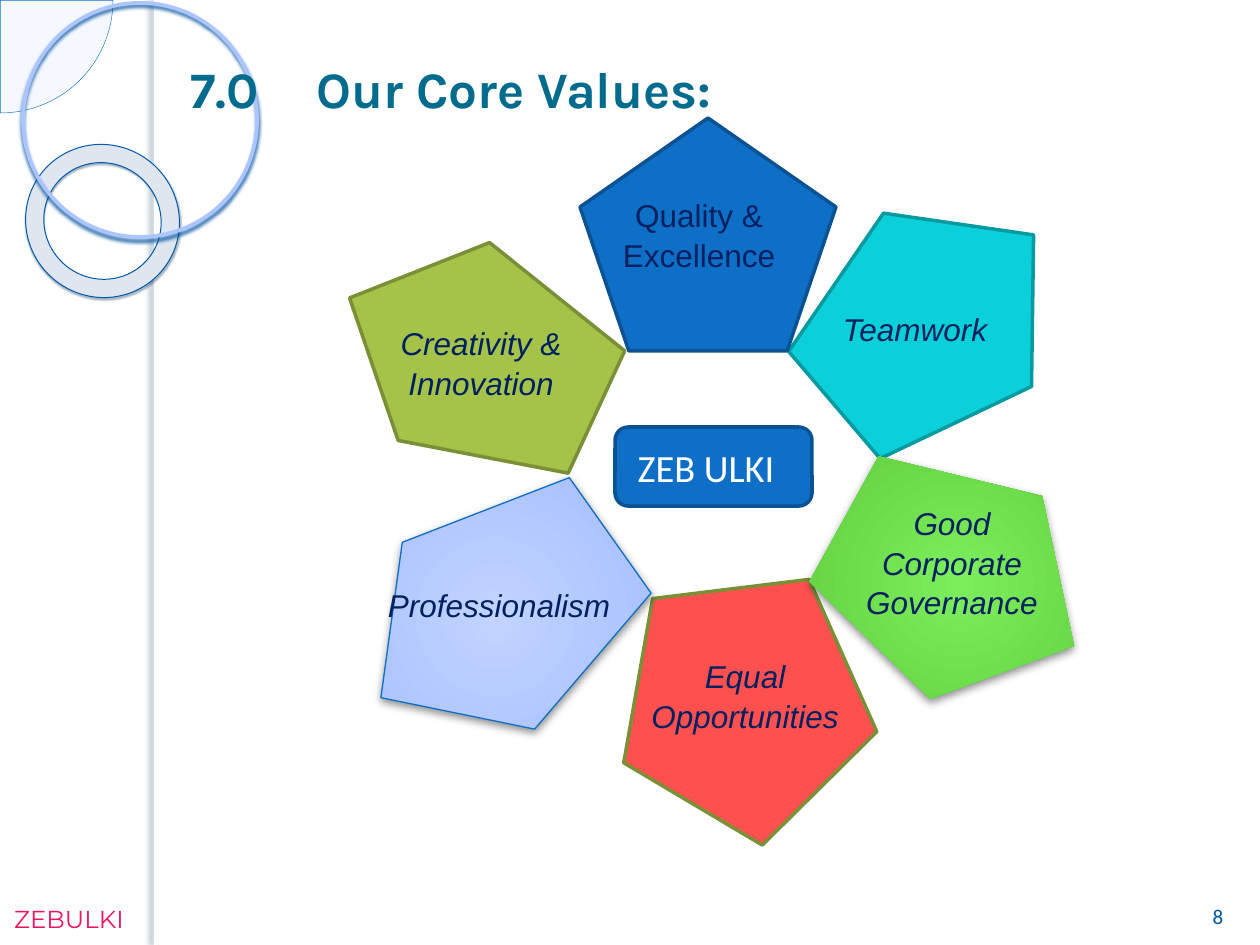
"""Build the core values slide: six pentagons around a centre label."""
from lxml import etree
from pptx import Presentation
from pptx.dml.color import RGBColor
from pptx.enum.shapes import MSO_SHAPE
from pptx.enum.text import MSO_ANCHOR, PP_ALIGN
from pptx.oxml.ns import qn
from pptx.util import Pt

PX = 914400 / 126
PENTAGON = MSO_SHAPE.REGULAR_PENTAGON
OVAL = MSO_SHAPE.OVAL
DONUT = MSO_SHAPE.DONUT
PIE = MSO_SHAPE.CHORD if not hasattr(MSO_SHAPE, "PIE") else MSO_SHAPE.PIE
RECT = MSO_SHAPE.RECTANGLE
LABEL = MSO_SHAPE.FLOWCHART_ALTERNATE_PROCESS
CENTER, LEFT = PP_ALIGN.CENTER, PP_ALIGN.LEFT
MIDDLE = MSO_ANCHOR.MIDDLE

WHITE = RGBColor(0xFF, 0xFF, 0xFF)
BLACK = RGBColor(0, 0, 0)
NAVY = RGBColor(0x00, 0x20, 0x60)
TEAL = RGBColor(0x00, 0x6B, 0x8D)
PINK = RGBColor(0xE8, 0x17, 0x66)
INK = RGBColor(0x00, 0x53, 0x9E)
BLUE = RGBColor(0x0F, 0x6F, 0xC6)
DEEP = RGBColor(0x0B, 0x52, 0x92)
CYAN = RGBColor(0x0B, 0xD0, 0xD9)
SEA = RGBColor(0x08, 0x9A, 0xA1)
OLIVE = RGBColor(0xA5, 0xC2, 0x49)
MOSS = RGBColor(0x7A, 0x90, 0x36)
RED = RGBColor(0xFF, 0x50, 0x50)
LIME = RGBColor(0x7C, 0xED, 0x5C)
GREEN = RGBColor(0x5B, 0xC8, 0x39)
PALE = RGBColor(0xC2, 0xD3, 0xFF)
SKY = RGBColor(0x9C, 0xB9, 0xFF)
RING = RGBColor(0xAD, 0xC5, 0xFF)
MIST = RGBColor(0xE3, 0xEA, 0xFD)
GREY = RGBColor(0xE0, 0xE6, 0xF0)
EDGE = RGBColor(0x00, 0x59, 0xAB)
SLATE = RGBColor(0x03, 0x37, 0x67)
DARK = RGBColor(0x00, 0x29, 0x4E)

deck = Presentation()
deck.slide_width, deck.slide_height = round(1260 * PX), round(945 * PX)
slide = deck.slides.add_slide(deck.slide_layouts[5])
shapes = slide.shapes


def draw(kind, box, fills, line=None, width=0, turn=0, shade=None):
    shape = shapes.add_shape(kind, *[round(v * PX) for v in box])
    shape.rotation = turn
    shape.shadow.inherit = False
    if not fills:
        shape.fill.background()
    elif len(fills) == 1:
        shape.fill.solid()
        shape.fill.fore_color.rgb = fills[0]
    else:
        shape.fill.gradient()
        for stop, color in zip(shape.fill.gradient_stops, fills):
            stop.color.rgb = color
        grad = shape.element.spPr.find(qn("a:gradFill"))
        grad.remove(grad.find(qn("a:lin")))
        path = etree.SubElement(grad, qn("a:path"), path="circle")
        etree.SubElement(path, qn("a:fillToRect"), l="50000", t="50000", r="50000", b="50000")
    if line:
        shape.line.color.rgb = line
        shape.line.width = Pt(width)
    else:
        shape.line.fill.background()
    if shade:
        color, alpha, blur, dist, angle = shade
        effects = shape.element.spPr.find(qn("a:effectLst"))
        outer = etree.SubElement(
            effects, qn("a:outerShdw"), blurRad=str(Pt(blur)), dist=str(Pt(dist)),
            dir=str(angle * 60000), algn="ctr", rotWithShape="0")
        tint = etree.SubElement(outer, qn("a:srgbClr"), val=str(color))
        etree.SubElement(tint, qn("a:alpha"), val=str(alpha * 1000))
    return shape


def write(mid, top, width, lines, size, font, color, slant=False):
    height = 13 + 38 * len(lines)
    box = [mid - width / 2, top, width, height]
    frame = shapes.add_textbox(*[round(v * PX) for v in box]).text_frame
    frame.word_wrap = True
    frame.text = "\n".join(lines)
    for para in frame.paragraphs:
        para.alignment = CENTER
        para.line_spacing = 1.05
        para.font.size = Pt(size)
        para.font.name = font
        para.font.color.rgb = color
        para.font.italic = slant


draw(RECT, (154, 0, 6, 945), [WHITE], shade=(SLATE, 25, 3, 3, 180))
write(69, 896, 149, ["ZEBULKI"], 14, "Montserrat", PINK)
pie = draw(PIE, (-112, -112, 225, 225), [MIST], BLUE, 0.25)
pie.adjustments[0], pie.adjustments[1] = 0, 54
tint = pie.element.spPr.find(qn("a:solidFill"))[0]
etree.SubElement(tint, qn("a:alpha"), val="33000")
donut = draw(DONUT, (25, 145, 155, 152), [GREY], EDGE, 0.58, 38.6, (DARK, 35, 1, 1.2, 75))
donut.adjustments[0] = 0.12
draw(OVAL, (23, 3, 234, 234), [], RING, 2.15, shade=(INK, 85, 2, 2, 90))

title = shapes.title
shapes.element.append(title.element)
title.left, title.top, title.width, title.height = [round(v * PX) for v in (178, 29, 994, 118)]
title.text = "7.0\tOur Core Values:"
title.text_frame.vertical_anchor = MIDDLE
head = title.text_frame.paragraphs[0]
head.alignment = LEFT
head.font.size = Pt(29.2)
head.font.name = "Karla"
head.font.bold = True
head.font.color.rgb = TEAL

draw(LABEL, (615, 427, 197, 79), [BLUE], DEEP, 2)
write(706, 436, 218, ["ZEB ULKI"], 22, "Calibri", WHITE)
write(1218, 896, 63, ["8"], 12, "Calibri", INK)

soft = (BLACK, 43, 5, 2, 90)
values = [
    ((820, 189, 228, 262), 49.5, [CYAN], SEA, 2, None, 915, 302, ["Teamwork"]),
    ((580, 118, 256, 233), 0, [BLUE], DEEP, 2, None, 699, 188, ["Quality &", "Excellence"]),
    ((364, 219, 218, 272), 294.8, [OLIVE], MOSS, 2, None, 481, 316,
     ["Creativity &", "Innovation"]),
    ((619, 588, 255, 258), 173, [RED], MOSS, 2, None, 745, 649, ["Equal", "Opportunities"]),
    ((843, 451, 232, 263), 118.9, [LIME, GREEN], None, 0, soft, 952, 496,
     ["Good", "Corporate", "Governance"]),
    ((381, 476, 229, 281), 234.7, [PALE, SKY], BLUE, 0.75, soft, 499, 578,
     ["Professionalism"]),
]
for box, turn, fills, line, width, shade, mid, top, lines in values:
    draw(PENTAGON, box, fills, line, width, turn, shade)
    write(mid, top, 270, lines, 18, "Arial", NAVY, lines[0] != "Quality &")

deck.save("out.pptx")
